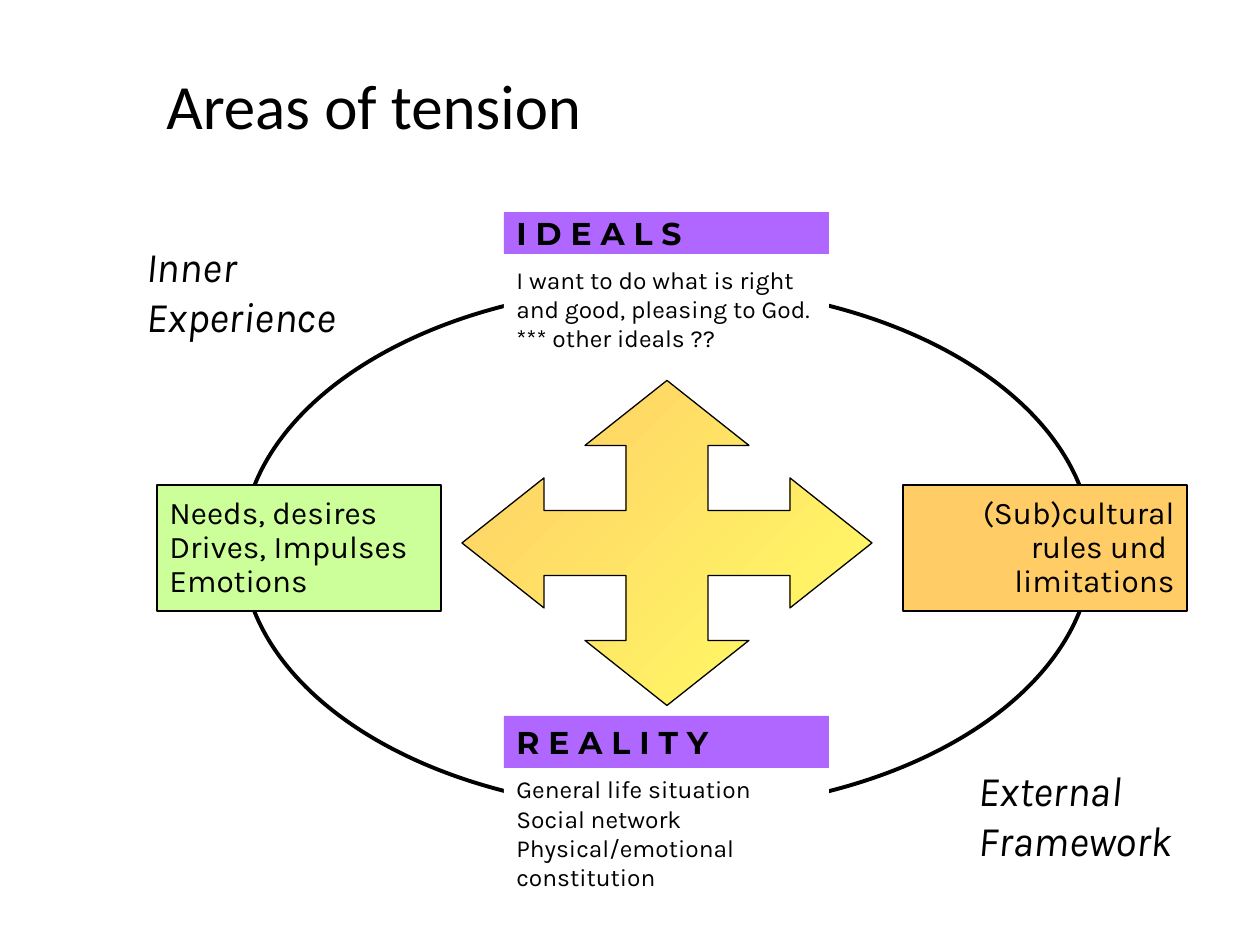
import pptx
import pptx.dml.color
import pptx.enum.shapes
import pptx.enum.text
import pptx.util

PX = 914400 / 126
SHAPE = pptx.enum.shapes.MSO_SHAPE
ANCHOR = pptx.enum.text.MSO_ANCHOR
ALIGN = pptx.enum.text.PP_ALIGN
BLACK = "000000"
WHITE = "FFFFFF"
PURPLE = "AF67FF"

TITLE = {"name": "Calibri", "size": 36}
CORNER = {"name": "Karla", "size": 24, "italic": True}
HEADING = {"name": "Montserrat", "size": 18, "bold": True}
BODY = {"name": "Karla", "size": 14}
FACTOR = {"name": "Karla", "size": 18}


def px(length):
    return round(length * PX)


def rgb(hex_color):
    return pptx.dml.color.RGBColor.from_string(hex_color)


class Diagram:
    """Holds the slide and the style shared by its elements."""

    def __init__(self, slide):
        self.slide = slide

    def outline(self, shape, width):
        shape.shadow.inherit = False
        if width:
            shape.line.color.rgb = rgb(BLACK)
            shape.line.width = pptx.util.Pt(width)
        else:
            shape.line.fill.background()

    def set_text(self, shape, paragraphs, font, anchor, align=ALIGN.LEFT, spacing=None):
        frame = shape.text_frame
        frame.word_wrap = True
        frame.vertical_anchor = anchor
        for index, words in enumerate(paragraphs):
            paragraph = frame.add_paragraph() if index else frame.paragraphs[0]
            paragraph.text = words
            paragraph.alignment = align
            paragraph.line_spacing = spacing
            for run in paragraph.runs:
                for key, value in font.items():
                    setattr(run.font, key, pptx.util.Pt(value) if key == "size" else value)
                run.font.color.rgb = rgb(BLACK)

    def label(self, box, words, font, anchor=ANCHOR.TOP):
        text_box = self.slide.shapes.add_textbox(*map(px, box))
        self.set_text(text_box, [words], font, anchor)

    def panel(self, box, fill, paragraphs, font, anchor=ANCHOR.MIDDLE, line=0, **layout):
        panel = self.slide.shapes.add_shape(SHAPE.RECTANGLE, *map(px, box))
        panel.fill.solid()
        panel.fill.fore_color.rgb = rgb(fill)
        self.outline(panel, line)
        self.set_text(panel, paragraphs, font, anchor, **layout)

    def ring(self, box):
        ring = self.slide.shapes.add_shape(SHAPE.OVAL, *map(px, box))
        ring.fill.background()
        self.outline(ring, 2.25)

    def four_way_arrow(self, center, width, height, colors):
        """Turn one arm by quarter turns on a 10 by 10 grid around the center."""
        arm = [(0, -5), (-2, -3), (-1, -3), (-1, -1), (-3, -1), (-3, -2)]
        points = []
        for _ in range(4):
            points += arm
            arm = [(y, -x) for x, y in arm]
        builder = self.slide.shapes.build_freeform(
            *points[0], scale=(px(width / 10), px(height / 10)))
        builder.add_line_segments(points[1:], close=True)
        arrow = builder.convert_to_shape(*map(px, center))
        arrow.fill.gradient()
        arrow.fill.gradient_angle = 315
        for stop, color, position in zip(arrow.fill.gradient_stops, colors, (0, 1)):
            stop.color.rgb = rgb(color)
            stop.position = position
        self.outline(arrow, 0.75)


def main():
    deck = pptx.Presentation()
    deck.slide_width = px(1260)
    deck.slide_height = px(945)
    diagram = Diagram(deck.slides.add_slide(deck.slide_layouts[6]))

    diagram.label((154, 35, 1062, 139), "Areas of tension", TITLE, ANCHOR.MIDDLE)
    diagram.ring((242, 286, 850, 525))

    diagram.panel((157, 485, 284, 126), "CCFF99",
                  ["Needs, desires", "Drives, Impulses", "Emotions"],
                  FACTOR, line=0.75, spacing=0.9)
    diagram.panel((903, 485, 284, 126), "FFCC66",
                  ["(Sub)cultural\nrules und \nlimitations"],
                  FACTOR, line=0.75, spacing=0.9, align=ALIGN.RIGHT)

    poles = [
        ("I D E A L S", (212, 42), (233, 126),
         ["I want to do what is right and good, pleasing to God.",
          "*** other ideals ??"]),
        ("R E A L I T Y", (716, 52), (742, 156),
         ["General life situation", "Social network",
          "Physical/emotional constitution"]),
    ]
    left, width = 504, 325
    for heading, (bar_top, bar_height), (top, height), details in poles:
        diagram.panel((left, top, width, height), WHITE, details, BODY, ANCHOR.BOTTOM)
        diagram.panel((left, bar_top, width, bar_height), PURPLE, [heading], HEADING)

    diagram.label((134, 234, 294, 113), "Inner\nExperience", CORNER)
    diagram.label((966, 758, 294, 113), "External\nFramework", CORNER)
    diagram.four_way_arrow((667, 543), 410, 325, ("FFCC66", "FFFF66"))

    deck.save("out.pptx")


if __name__ == "__main__":
    main()
